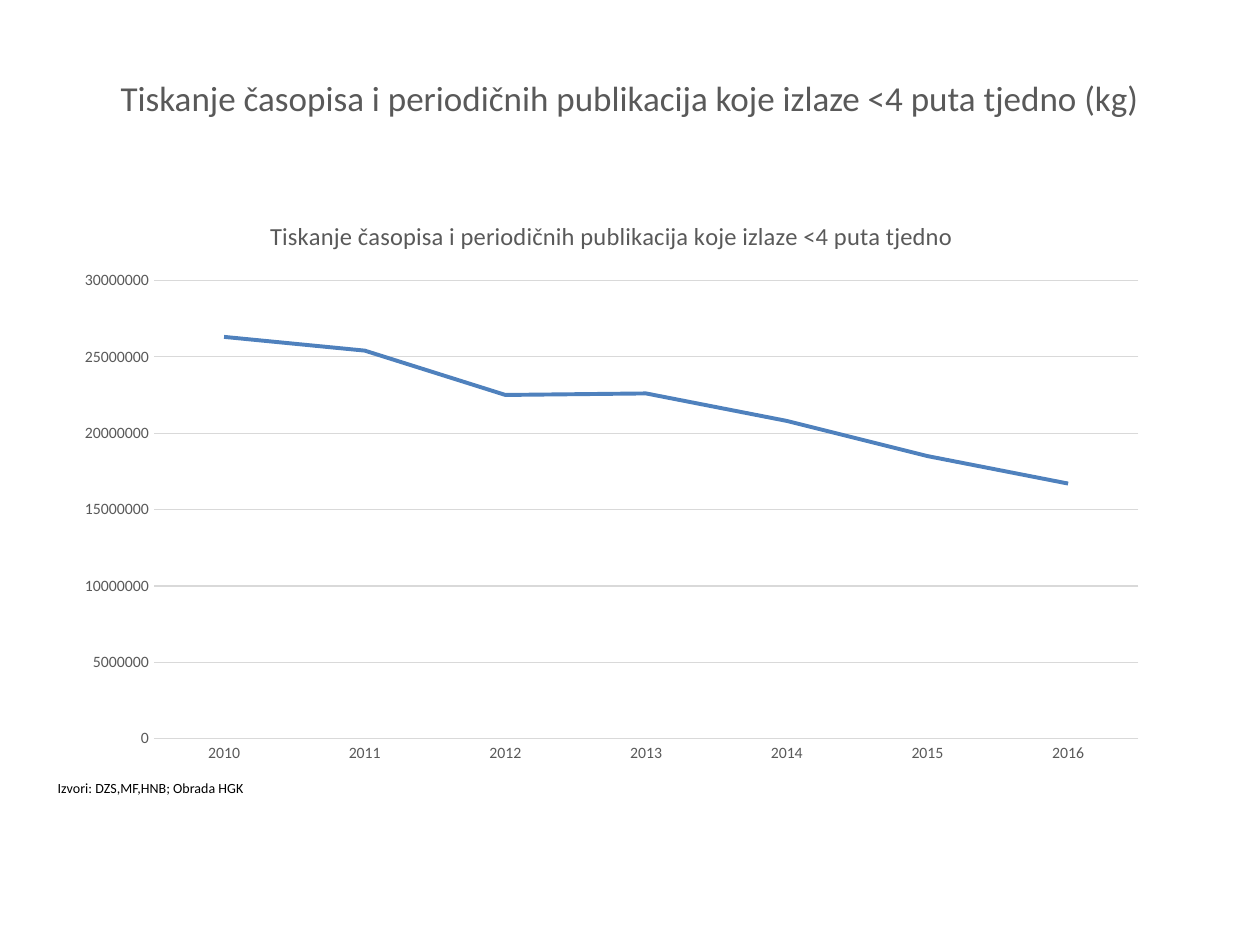
from dataclasses import dataclass

from pptx import Presentation
from pptx.chart.data import CategoryChartData
from pptx.dml.color import RGBColor
from pptx.enum.chart import XL_CHART_TYPE as ChartType, XL_MARKER_STYLE as Marker, XL_TICK_MARK as Tick
from pptx.enum.text import MSO_ANCHOR as Anchor, PP_ALIGN as Align
from pptx.util import Inches, Pt


@dataclass(frozen=True)
class Theme:
    font: str = "Calibri"
    gray: RGBColor = RGBColor.from_string("595959")
    black: RGBColor = RGBColor.from_string("000000")
    grid: RGBColor = RGBColor.from_string("D9D9D9")
    blue: RGBColor = RGBColor.from_string("4F81BD")
    title: int = 20
    chart_title: int = 14
    axis: int = 9
    source: int = 8


THEME = Theme()
TOPIC = "Tiskanje časopisa i periodičnih publikacija koje izlaze <4 puta tjedno"
YEARS = range(2010, 2017)
KILOGRAMS = [26300000, 25400000, 22500000, 22600000, 20800000, 18500000, 16700000]


def style_font(font, size, color):
    font.name = THEME.font
    font.size = Pt(size)
    font.bold = False
    font.color.rgb = color


def add_text(slide, box, text, *, size, color, align=Align.LEFT, anchor=Anchor.TOP):
    frame = slide.shapes.add_textbox(*map(Inches, box)).text_frame
    frame.word_wrap = True
    frame.vertical_anchor = anchor
    paragraph = frame.paragraphs[0]
    paragraph.alignment = align
    run = paragraph.add_run()
    run.text = text
    style_font(run.font, size, color)


def style_line(line, color, width):
    line.color.rgb = color
    line.width = Pt(width)


def add_print_chart(slide, box):
    data = CategoryChartData(number_format="0")
    data.categories = YEARS
    data.add_series(TOPIC, KILOGRAMS)
    chart = slide.shapes.add_chart(ChartType.LINE, *map(Inches, box), data).chart
    style_font(chart.font, THEME.axis, THEME.gray)
    chart.has_legend = False

    # Chart title
    heading = chart.chart_title.text_frame
    heading.text = TOPIC
    style_font(heading.paragraphs[0].runs[0].font, THEME.chart_title, THEME.gray)
    chart.chart_title.include_in_layout = False

    # Axes
    years, weight = chart.category_axis, chart.value_axis
    for axis, number_format in ((years, "#,##0"), (weight, "0")):
        axis.major_tick_mark = axis.minor_tick_mark = Tick.NONE
        axis.tick_labels.number_format = number_format
        axis.tick_labels.number_format_is_linked = False
        style_font(axis.tick_labels.font, THEME.axis, THEME.gray)
    style_line(years.format.line, THEME.grid, 0.75)
    weight.format.line.fill.background()
    weight.minimum_scale, weight.maximum_scale, weight.major_unit = 0, 30000000, 5000000
    style_line(weight.major_gridlines.format.line, THEME.grid, 0.75)

    # Printed weight
    chart.plots[0].vary_by_categories = False
    printed = chart.plots[0].series[0]
    printed.smooth = False
    printed.marker.style = Marker.NONE
    style_line(printed.format.line, THEME.blue, 2.25)


def build_slide(prs):
    slide = prs.slides.add_slide(prs.slide_layouts[6])
    add_text(slide, (0.5, 0.3, 9, 0.94), f"{TOPIC} (kg)", size=THEME.title,
             color=THEME.gray, align=Align.CENTER, anchor=Anchor.MIDDLE)
    add_print_chart(slide, (0.5, 1.56, 8.71, 4.58))
    add_text(slide, (0.36, 6.14, 6.13, 0.24), "Izvori: DZS,MF,HNB; Obrada HGK",
             size=THEME.source, color=THEME.black)


def main():
    prs = Presentation()
    prs.slide_width, prs.slide_height = Inches(10), Inches(7.5)
    build_slide(prs)
    prs.save("out.pptx")


if __name__ == "__main__":
    main()
